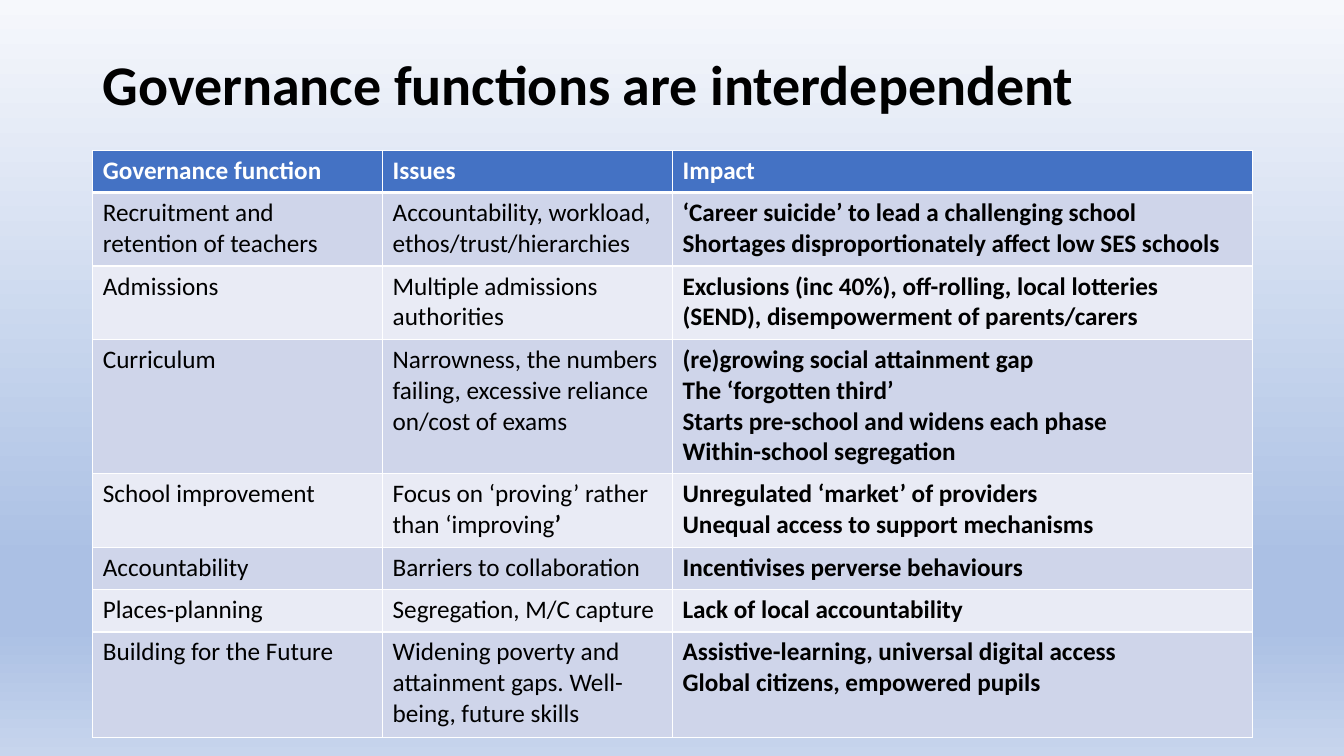
from pptx import Presentation
from pptx import util as u
from pptx.dml.color import RGBColor
from pptx.enum import text
from pptx.oxml.ns import qn
from lxml import etree

# Content: a list in a cell holds its paragraphs
TITLE = "Governance functions are interdependent"
HEADER = ("Governance function", "Issues", "Impact")
ROWS = [
    ("Recruitment and retention of teachers",
     "Accountability, workload, ethos/trust/hierarchies",
     ["‘Career suicide’ to lead a challenging school",
      "Shortages disproportionately affect low SES schools"]),
    ("Admissions",
     "Multiple admissions authorities",
     ["Exclusions (inc 40%), off-rolling, local lotteries (SEND), "
      "disempowerment of parents/carers"]),
    ("Curriculum",
     "Narrowness, the numbers failing, excessive reliance on/cost of exams",
     ["(re)growing social attainment gap", "The ‘forgotten third’",
      "Starts pre-school and widens each phase", "Within-school segregation"]),
    ("School improvement",
     "Focus on ‘proving’ rather than ‘improving’",
     ["Unregulated ‘market’ of providers",
      "Unequal access to support mechanisms"]),
    ("Accountability", "Barriers to collaboration",
     ["Incentivises perverse behaviours"]),
    ("Places-planning", "Segregation, M/C capture",
     ["Lack of local accountability"]),
    ("Building for the Future",
     "Widening poverty and attainment gaps. Well-being, future skills",
     ["Assistive-learning, universal digital access",
      "Global citizens, empowered pupils"]),
]
BOLD_ENDING = "improving’"  # its closing quote mark is bold
SKY = [(0, "F6F8FC"), (74, "ABC0E4"), (83, "ABC0E4"), (100, "C7D5ED")]
BLUE, BANDS = "4472C4", ("CFD5EA", "E9EBF5")
WHITE, BLACK = "FFFFFF", "000000"

# Grid, in inches
WIDTH, HEIGHT = 13.33, 7.5
LEFT, TABLE_TOP, TABLE_WIDTH = 0.92, 1.49, 11.5
COLUMN_SHARES = (0.25, 0.25, 0.5)
LINES = (1, 2, 2, 4, 2, 1, 1, 3)
ROW_HEIGHTS = {1: 0.42, 2: 0.73, 3: 1.05, 4: 1.33}


def color(code):
    return RGBColor.from_string(code)


def write(frame, paragraphs, size=18, ink=BLACK, bold=False, spacing=None):
    """Fill a text frame; each paragraph is a string."""
    frame.word_wrap = True
    for i, line in enumerate(paragraphs):
        para = frame.paragraphs[0] if i == 0 else frame.add_paragraph()
        para.line_spacing = spacing
        parts = [(line, bold)]
        if line.endswith(BOLD_ENDING):
            parts = [(line[:-1], bold), (line[-1], True)]
        for part, weight in parts:
            span = para.add_run()
            span.text = part
            span.font.name = "Calibri"
            span.font.size = u.Pt(size)
            span.font.bold = weight
            span.font.color.rgb = color(ink)


def add_solid(parent, code):
    fill = etree.SubElement(parent, qn("a:solidFill"))
    etree.SubElement(fill, qn("a:srgbClr"), val=code)


def style_cell(cell, fill, top, bottom):
    """Draw white borders, then the fill."""
    props = cell._tc.get_or_add_tcPr()
    for side, points in (("L", 1), ("R", 1), ("T", top), ("B", bottom)):
        edge = etree.SubElement(props, qn(f"a:ln{side}"), w=str(u.Pt(points)))
        add_solid(edge, WHITE)
    cell.fill.solid()
    cell.fill.fore_color.rgb = color(fill)


def paint_background(page):
    page.background.fill.gradient()
    gradient = page._element.find(".//" + qn("a:gradFill"))
    for child in list(gradient):
        gradient.remove(child)
    stops = etree.SubElement(gradient, qn("a:gsLst"))
    for percent, code in SKY:
        stop = etree.SubElement(stops, qn("a:gs"), pos=str(percent * 1000))
        etree.SubElement(stop, qn("a:srgbClr"), val=code)
    etree.SubElement(gradient, qn("a:lin"), ang="5400000", scaled="0")


def add_title(page):
    box = page.shapes.add_textbox(*map(u.Inches, (LEFT, 0.4, TABLE_WIDTH, 0.94)))
    box.text_frame.vertical_anchor = text.MSO_ANCHOR.MIDDLE
    write(box.text_frame, [TITLE], size=40, bold=True, spacing=0.9)


def add_functions_table(page):
    heights = [ROW_HEIGHTS[count] for count in LINES]
    place = map(u.Inches, (LEFT, TABLE_TOP, TABLE_WIDTH, sum(heights)))
    table = page.shapes.add_table(len(heights), len(HEADER), *place).table
    for column, share in zip(table.columns, COLUMN_SHARES):
        column.width = u.Inches(TABLE_WIDTH * share)
    for row, height in zip(table.rows, heights):
        row.height = u.Inches(height)
    for r, values in enumerate([HEADER] + ROWS):
        head = r == 0
        for c, value in enumerate(values):
            cell = table.cell(r, c)
            write(cell.text_frame, value if isinstance(value, list) else [value],
                  ink=WHITE if head else BLACK, bold=head or c == 2)
            style_cell(cell, BLUE if head else BANDS[(r - 1) % 2],
                       top=3 if r == 1 else 1, bottom=3 if head else 1)


def main():
    deck = Presentation()
    deck.slide_width, deck.slide_height = u.Inches(WIDTH), u.Inches(HEIGHT)
    page = deck.slides.add_slide(deck.slide_layouts[6])
    paint_background(page)
    add_title(page)
    add_functions_table(page)
    deck.save("out.pptx")


if __name__ == "__main__":
    main()
